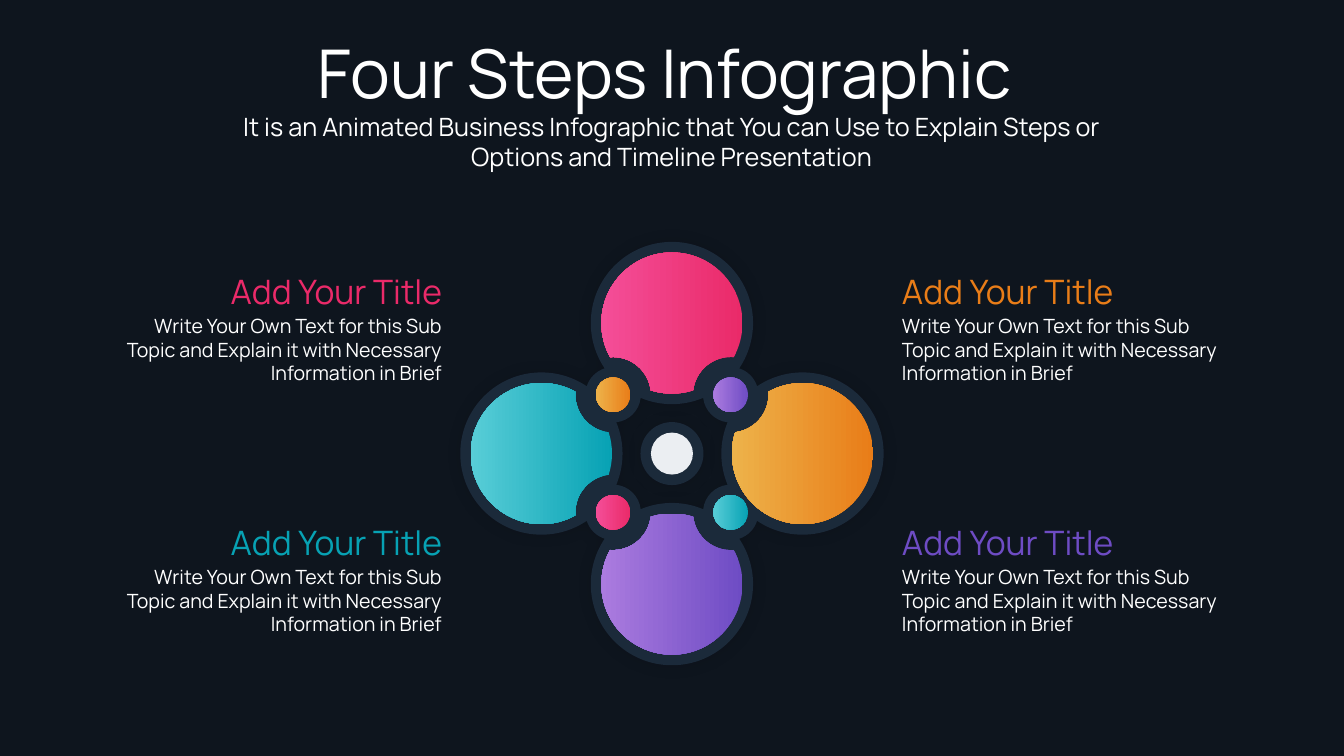
"""Build a dark slide with four linked circles and four captions."""
from dataclasses import dataclass
from math import acos, atan2, cos, degrees, hypot, radians, sin, tan

from lxml import etree
from pptx import Presentation
from pptx.dml.color import RGBColor
from pptx.enum.shapes import MSO_SHAPE
from pptx.enum.text import MSO_ANCHOR, MSO_AUTO_SIZE, PP_ALIGN
from pptx.oxml.ns import qn
from pptx.util import Emu, Pt

OVAL, TOP = MSO_SHAPE.OVAL, MSO_ANCHOR.TOP
FIT, FIXED = MSO_AUTO_SIZE.SHAPE_TO_FIT_TEXT, MSO_AUTO_SIZE.NONE
LEFT, MID, RIGHT = PP_ALIGN.LEFT, PP_ALIGN.CENTER, PP_ALIGN.RIGHT

COLS, ROWS, CELL = 160, 90, 76200
HEX = {"back": "0E151E", "frame": "1B2A3A", "pearl": "EBEEF2",
       "white": "FFFFFF", "black": "000000"}
BLEND = {"orange": ("E97D18", "EDB24A"), "violet": ("6E4CC4", "AB7BDF"),
         "teal": ("07A2B4", "58CDD7"), "pink": ("EA2A69", "F44E98")}

REACH, STEP = 15.54, 7
RIM, PETAL = 9.66, 8.4
JOINT, NOTCH, DOT = 3.3, 4.5, 2.06
HUB, PEARL = 3.75, 2.5
GAP = hypot(REACH - STEP, STEP)
AIM = degrees(atan2(STEP, STEP - REACH))
TILT = AIM - 180

HEAD = "Four Steps Infographic "
LEAD = ("It is an Animated Business Infographic that You can Use to "
        "Explain Steps or Options and Timeline Presentation")
NAME = "Add Your Title"
NOTE = ("Write Your Own Text for this Sub\n"
        "Topic and Explain it with Necessary\nInformation in Brief")

Point = tuple[float, float]


@dataclass
class Box:
    left: float
    top: float
    wide: float
    high: float

    def cells(self) -> list[Emu]:
        return [Emu(round(n * CELL))
                for n in (self.left, self.top, self.wide, self.high)]


@dataclass
class Topic:
    tint: str
    side: PP_ALIGN
    row: float


TOPICS = [Topic("pink", RIGHT, 31.7), Topic("teal", RIGHT, 61.6),
          Topic("orange", LEFT, 31.7), Topic("violet", LEFT, 61.6)]


def polar(mid: Point, far: float, turn: float) -> Point:
    return (mid[0] + far * cos(radians(turn)),
            mid[1] + far * sin(radians(turn)))


def arc(mid: Point, far: float, start: float, end: float) -> list[Point]:
    low, high = sorted((start, end))
    cuts = [low, *(t for t in range(-360, 721, 90) if low < t < high), high]
    cuts = cuts if start < end else cuts[::-1]
    dots = []
    for a, b in zip(cuts, cuts[1:]):
        pull = far * 4 / 3 * tan(radians(b - a) / 4)
        p, q = polar(mid, far, a), polar(mid, far, b)
        dots += [polar(p, pull, a + 90), polar(q, pull, b - 90), q]
    return dots


def spread(one: float, two: float) -> float:
    return degrees(acos((one**2 + GAP**2 - two**2) / (2 * one * GAP)))


CORE = (COLS / 2, ROWS * 0.6)
HEARTS = [polar(CORE, REACH, 90 * k) for k in range(4)]
KNOTS = [polar(CORE, hypot(STEP, STEP), 90 * k + 45) for k in range(4)]


def frame_loops() -> list[list[Point]]:
    cut, bend = spread(RIM, JOINT), spread(JOINT, RIM)
    near, far = AIM - cut, AIM + cut
    outer, inner = [], []
    for k in range(4):
        turn, heart, knot = 90 * k, HEARTS[k], KNOTS[k]
        outer += arc(heart, RIM, turn - near, turn + near)
        outer += arc(knot, JOINT, turn + TILT + bend, turn + 90 - TILT - bend)
        inner += arc(heart, RIM, turn + 360 - far, turn + far)
        inner += arc(knot, JOINT, turn + 360 + TILT - bend,
                     turn + 90 - TILT + bend)
    return [outer, inner]


def petal_loop(k: int) -> list[Point]:
    cut, bend = spread(PETAL, NOTCH), spread(NOTCH, PETAL)
    near, far, turn = AIM - cut, AIM + cut, 90 * k
    loop = arc(HEARTS[k], PETAL, turn - near, turn + near)
    if k:
        loop += arc(KNOTS[k], NOTCH, turn + TILT + bend, turn + TILT - bend)
    loop += arc(HEARTS[k], PETAL, turn + (far if k else near),
                turn + 360 - far)
    return loop + arc(KNOTS[k - 1], NOTCH, turn - TILT + bend,
                      turn - TILT - bend)


def tone(fill, name: str) -> None:
    if name in HEX:
        fill.solid()
        fill.fore_color.rgb = RGBColor.from_string(HEX[name])
        return
    fill.gradient()
    fill.gradient_angle = 180
    for stop, shade in zip(fill.gradient_stops, BLEND[name]):
        stop.color.rgb = RGBColor.from_string(shade)


def finish(shape, name: str, glow: bool) -> None:
    tone(shape.fill, name)
    shape.line.fill.background()
    shape.shadow.inherit = False
    if glow:
        effects = shape.element.spPr.find(qn("a:effectLst"))
        cast = etree.SubElement(effects, qn("a:outerShdw"),
                                blurRad=str(Pt(10)), dist="0", algn="ctr")
        shade = etree.SubElement(cast, qn("a:srgbClr"), val=HEX["black"])
        etree.SubElement(shade, qn("a:alpha"), val="12000")


def trace(slide, loops: list[list[Point]], name: str, glow: bool) -> None:
    grid = [[(round(x * CELL), round(y * CELL)) for x, y in loop]
            for loop in loops]
    pen = slide.shapes.build_freeform(*grid[0][-1])
    for loop in grid:
        if loop is not grid[0]:
            pen.move_to(*loop[-1])
        pen.add_line_segments(loop)
    shape = pen.convert_to_shape()
    lines = list(shape.element.iter(qn("a:lnTo")))
    for first, *rest in zip(lines[::3], lines[1::3], lines[2::3]):
        first.tag = qn("a:cubicBezTo")
        for line in rest:
            first.append(line[0])
            line.getparent().remove(line)
    finish(shape, name, glow)


def disc(slide, mid: Point, far: float, name: str, glow: bool) -> None:
    box = Box(mid[0] - far, mid[1] - far, 2 * far, 2 * far)
    finish(slide.shapes.add_shape(OVAL, *box.cells()), name, glow)


def dress(target, style: dict) -> None:
    for key, value in style.items():
        setattr(target, key, value)


def write(shape, box: Box, text: str, size: int, tint: str,
          side: PP_ALIGN, wrap: bool) -> None:
    shape.left, shape.top, shape.width, shape.height = box.cells()
    frame = shape.text_frame
    frame.text = text
    dress(frame, {"word_wrap": wrap, "vertical_anchor": TOP,
                  "auto_size": FIXED if wrap else FIT})
    for line in frame.paragraphs:
        dress(line, {"alignment": side, "space_before": Pt(0)})
        font = line.runs[0].font
        dress(font, {"name": "Manrope", "size": Pt(size)})
        tone(font.fill, tint)


def main() -> None:
    deck = Presentation()
    deck.slide_width, deck.slide_height = Emu(COLS * CELL), Emu(ROWS * CELL)
    slide = deck.slides.add_slide(deck.slide_layouts[0])
    tone(slide.background.fill, "back")
    trace(slide, frame_loops(), "frame", True)
    for k, name in enumerate(BLEND):
        trace(slide, [petal_loop(k)], name, False)
    for k, name in enumerate(BLEND):
        disc(slide, KNOTS[k - 2], DOT, name, False)
    disc(slide, CORE, HUB, "frame", True)
    disc(slide, CORE, PEARL, "pearl", False)
    for topic in TOPICS:
        for text, size, tint, drop, wide, high in (
                (NAME, 24, topic.tint, 0, 32.5, 6),
                (NOTE, 14, "white", 5.1, 43.6, 9.7)):
            left = 53.8 - wide if topic.side == RIGHT else COLS - 53.8
            box = Box(left, topic.row + drop, wide, high)
            write(slide.shapes.add_textbox(*box.cells()), box, text, size,
                  tint, topic.side, False)
    for shape, top, high, text, size in (
            (slide.shapes.title, 3.1, 10.9, HEAD, 48),
            (slide.placeholders[1], 12.6, 8.5, LEAD, 18)):
        write(shape, Box(22.4, top, 115.1, high), text, size, "white", MID, True)
    deck.save("out.pptx")


if __name__ == "__main__":
    main()
